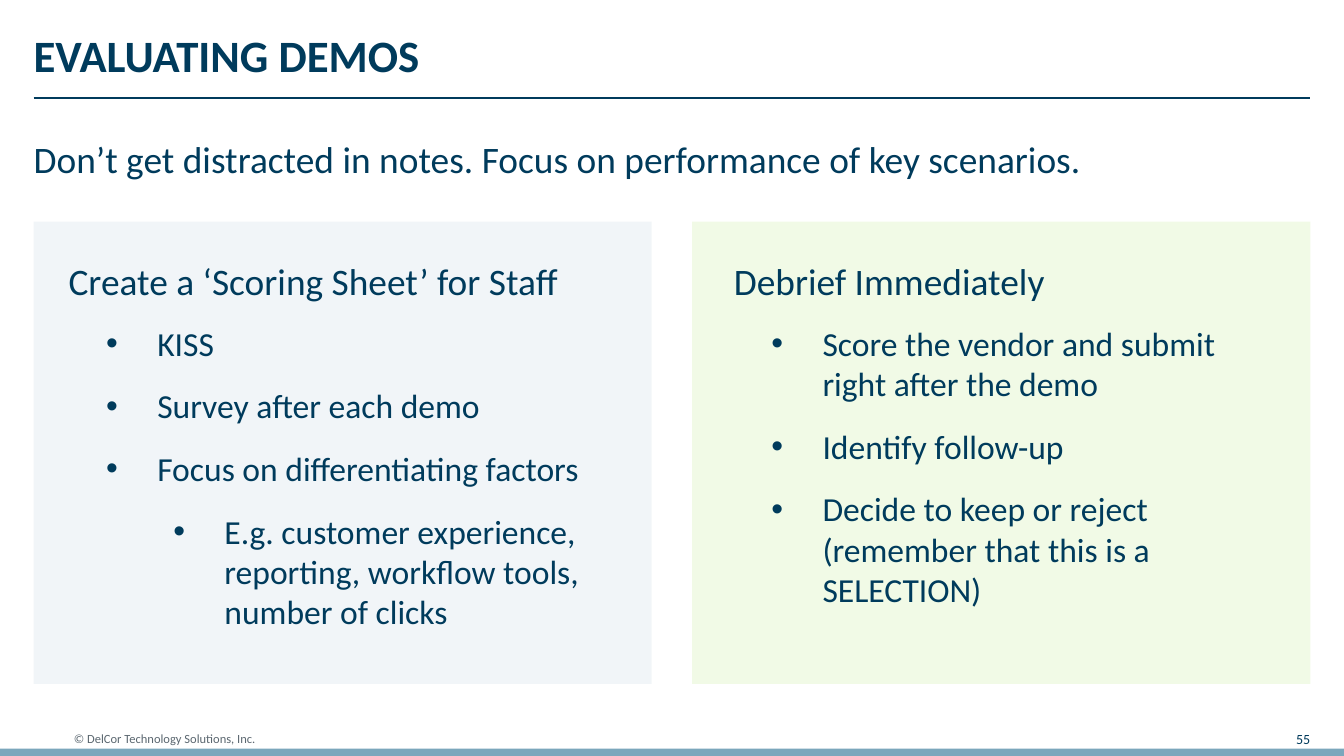
from dataclasses import dataclass

from lxml.etree import SubElement
from pptx import Presentation
from pptx.dml.color import RGBColor
from pptx.enum.shapes import MSO_CONNECTOR as CONN, MSO_SHAPE as SHAPE
from pptx.enum.text import MSO_ANCHOR as ANCHOR, MSO_AUTO_SIZE as AUTO, PP_ALIGN as ALIGN
from pptx.oxml.ns import qn
from pptx.util import Inches, Pt

NAVY = "003B5C"
SLIDE_W = 10
SLIDE_H = SLIDE_W * 9 / 16
MARGIN, WIDTH = 0.25, 9.5
PANEL_W, PANEL_TOP, PANEL_H = 4.6, 1.65, 3.44
HEAD_TOP, LIST_TOP, LINE_H = 1.92, 2.4, 0.48
HANGING, LEVEL_STEP = 0.38, 0.5


@dataclass
class Item:
    text: str
    level: int = 0


@dataclass
class Panel:
    left: float
    fill: str
    heading: str
    head_left: float
    head_w: float
    list_left: float
    list_w: float
    list_h: float
    items: list[Item]


def color(value: str) -> RGBColor:
    return RGBColor.from_string(value)


def place(sp, left: float, top: float, width: float, height: float) -> None:
    sp.left, sp.top = Inches(left), Inches(top)
    sp.width, sp.height = Inches(width), Inches(height)


def add_run(p, text: str, *, size: float, fill: str = NAVY, bold: bool = False) -> None:
    r = p.add_run()
    r.text = text
    r.font.name, r.font.size, r.font.bold = "Calibri", Pt(size), bold
    r.font.color.rgb = color(fill)


def prepare(sp, anchor=ANCHOR.TOP):
    tf = sp.text_frame
    tf.word_wrap, tf.auto_size, tf.vertical_anchor = True, AUTO.NONE, anchor
    tf.margin_left = tf.margin_top = tf.margin_right = tf.margin_bottom = 0
    return tf


def add_text(s, text: str, left: float, top: float, width: float, height: float, *,
             size: float = 20, fill: str = NAVY, align=ALIGN.LEFT, anchor=ANCHOR.TOP) -> None:
    sp = s.shapes.add_textbox(Inches(left), Inches(top), Inches(width), Inches(height))
    p = prepare(sp, anchor).paragraphs[0]
    p.alignment = align
    add_run(p, text, size=size, fill=fill)


def add_rect(s, left: float, top: float, width: float, height: float, fill: str,
             opacity: int = 100) -> None:
    sp = s.shapes.add_shape(SHAPE.RECTANGLE, Inches(left), Inches(top),
                            Inches(width), Inches(height))
    sp.shadow.inherit = False
    sp.fill.solid()
    sp.fill.fore_color.rgb = color(fill)
    sp.line.fill.background()
    if opacity < 100:
        clr = sp.element.spPr.find(f"{qn('a:solidFill')}/{qn('a:srgbClr')}")
        SubElement(clr, qn("a:alpha"), val=str(opacity * 1000))


def add_rule(s, left: float, top: float, width: float) -> None:
    line = s.shapes.add_connector(CONN.STRAIGHT, Inches(left), Inches(top),
                                  Inches(left + width), Inches(top))
    line.line.color.rgb = color(NAVY)
    line.line.width = Pt(1)
    SubElement(line.element.spPr, qn("a:effectLst"))


def fill_title(sp, text: str) -> None:
    place(sp, MARGIN, 0.25, WIDTH, LINE_H)
    p = prepare(sp).paragraphs[0]
    p.alignment, p.line_spacing = ALIGN.LEFT, 0.9
    add_run(p, text, size=24, bold=True)


def fill_list(sp, items: list[Item]) -> None:
    tf = prepare(sp)
    for i, item in enumerate(items):
        p = tf.add_paragraph() if i else tf.paragraphs[0]
        p.level = item.level
        pPr = p._p.get_or_add_pPr()
        pPr.set("marL", str(Inches(HANGING + LEVEL_STEP * item.level)))
        pPr.set("indent", str(-Inches(HANGING)))
        SubElement(pPr, qn("a:buFont"), typeface="Arial")
        SubElement(pPr, qn("a:buChar"), char="•")
        p.alignment, p.space_before, p.space_after = ALIGN.LEFT, Pt(0), Pt(12)
        add_run(p, item.text, size=18)


def add_panel(s, panel: Panel, body) -> None:
    add_rect(s, panel.left, PANEL_TOP, PANEL_W, PANEL_H, panel.fill, opacity=50)
    add_text(s, panel.heading, panel.head_left, HEAD_TOP, panel.head_w, LINE_H)
    place(body, panel.list_left, LIST_TOP, panel.list_w, panel.list_h)
    fill_list(body, panel.items)
    body.element.getparent().append(body.element)


PANELS = [
    Panel(MARGIN, "E5EDF2", "Create a ‘Scoring Sheet’ for Staff", 0.51, 4.68, 0.79, 4.06, 2.59, [
        Item("KISS"),
        Item("Survey after each demo"),
        Item("Focus on differentiating factors"),
        Item("E.g. customer experience, reporting, workflow tools, number of clicks", 1),
    ]),
    Panel(MARGIN + WIDTH - PANEL_W, "E5F7CE", "Debrief Immediately", 5.46, 3.78, 5.74, 3.8, 1.74, [
        Item("Score the vendor and submit right after the demo"),
        Item("Identify follow-up"),
        Item("Decide to keep or reject (remember that this is a SELECTION)"),
    ]),
]


def main() -> None:
    prs = Presentation()
    prs.slide_width, prs.slide_height = Inches(SLIDE_W), Inches(SLIDE_H)
    s = prs.slides.add_slide(prs.slide_layouts[3])
    title, *bodies = s.placeholders

    add_rect(s, 0, 5.57, SLIDE_W, 0.09, "7BA7BC")
    add_text(s, "© DelCor Technology Solutions, Inc.", 0.55, 5.41, 1.92, 0.17,
             size=6.75, fill="5B6770", anchor=ANCHOR.MIDDLE)
    add_text(s, "55", 9.39, 5.41, 0.36, 0.17, size=7.5, align=ALIGN.RIGHT, anchor=ANCHOR.MIDDLE)
    add_rule(s, MARGIN, 0.73, WIDTH)
    fill_title(title, "EVALUATING DEMOS")
    add_text(s, "Don’t get distracted in notes. Focus on performance of key scenarios.",
             MARGIN, 1.01, 8.22, LINE_H)
    for panel, body in zip(PANELS, bodies):
        add_panel(s, panel, body)

    prs.save("out.pptx")


if __name__ == "__main__":
    main()
